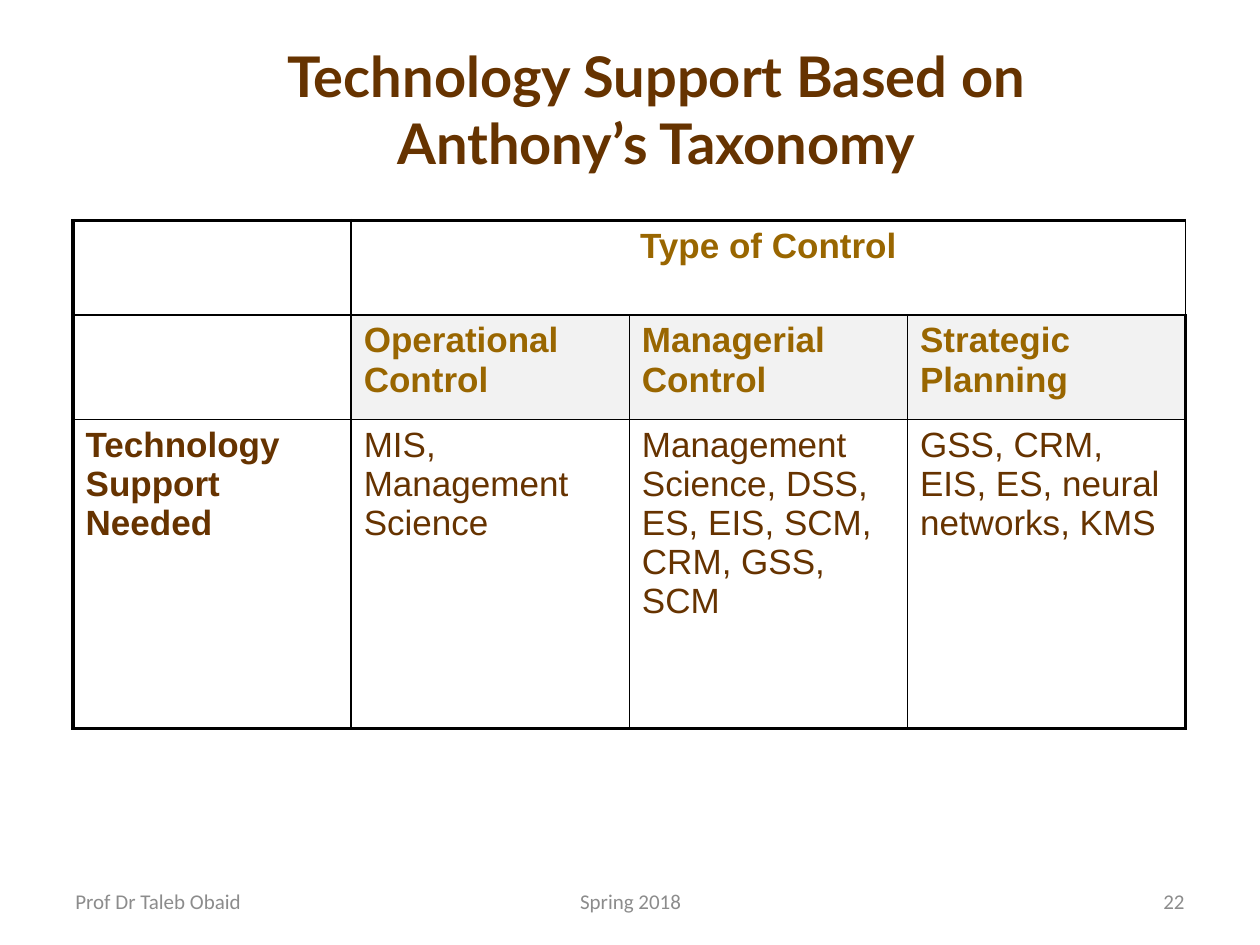
"""Build a slide with a table of technology support by type of control."""
from lxml import etree
from pptx import Presentation
from pptx.dml.color import RGBColor
from pptx.enum.text import MSO_ANCHOR, PP_ALIGN
from pptx.oxml.ns import qn
from pptx.util import Inches, Pt

LEFT, CENTER, RIGHT = PP_ALIGN.LEFT, PP_ALIGN.CENTER, PP_ALIGN.RIGHT
MIDDLE = MSO_ANCHOR.MIDDLE
TITLE_ONLY = 5
BROWN, GOLD, GRAY = "663300", "996600", "8C8C8C"
BLACK, PALE = "000000", "F2F2F2"
THICK, THIN = Pt(2.25), Pt(1)

ROWS = [
    ["", "Type of Control", "", ""],
    ["", "Operational Control", "Managerial Control", "Strategic Planning"],
    ["Technology Support Needed", "MIS, Management Science",
     "Management Science, DSS, ES, EIS, SCM, CRM, GSS, SCM",
     "GSS, CRM, EIS, ES, neural networks, KMS"],
]
ROW_HEIGHTS = [0.75, 0.83, 2.45]
COLUMN_WIDTH = 8.83 / 4
FOOTERS = [
    ("Prof Dr Taleb Obaid", 0.5, 2.33, LEFT),
    ("Spring 2018", 3.42, 3.17, CENTER),
    ("22", 7.17, 2.33, RIGHT),
]


def color(value):
    return RGBColor.from_string(value)


def write(frame, text, font, size, text_color, bold=False, align=LEFT):
    paragraph = frame.paragraphs[0]
    paragraph.text = text
    paragraph.alignment = align
    paragraph.font.name = font
    paragraph.font.size = Pt(size)
    paragraph.font.bold = bold
    paragraph.font.color.rgb = color(text_color)


def add_title(slide, text):
    title = slide.shapes.title
    title.left, title.top = Inches(1.17), Inches(0.3)
    title.width, title.height = Inches(8.08), Inches(1.12)
    title.text_frame.vertical_anchor = MIDDLE
    write(title.text_frame, text, "Lato", 32, BROWN, True, CENTER)


def add_footer(slide, text, left, width, align):
    box = slide.shapes.add_textbox(Inches(left), Inches(6.95), Inches(width), Inches(0.4))
    box.text_frame.word_wrap = True
    box.text_frame.vertical_anchor = MIDDLE
    write(box.text_frame, text, "Calibri", 12, GRAY, align=align)


def set_borders(cell, outer_sides):
    properties = cell._tc.get_or_add_tcPr()
    for side, is_outer in zip("LRTB", outer_sides):
        width = THICK if is_outer else THIN
        line = etree.SubElement(properties, qn(f"a:ln{side}"), w=str(width))
        fill = etree.SubElement(line, qn("a:solidFill"))
        etree.SubElement(fill, qn("a:srgbClr"), val=BLACK)


def format_cell(cell, text, row, column):
    last_row, last_column = len(ROWS) - 1, len(ROWS[0]) - 1
    set_borders(cell, (column == 0, column == last_column, row == 0, row == last_row))
    if row == 1 and column > 0:
        cell.fill.solid()
        cell.fill.fore_color.rgb = color(PALE)
    else:
        cell.fill.background()
    write(cell.text_frame, text, "Arial", 20,
          BROWN if row == last_row else GOLD,
          bold=row < last_row or column == 0,
          align=CENTER if row == 0 else LEFT)


def add_control_table(slide):
    frame = slide.shapes.add_table(
        len(ROWS), len(ROWS[0]), Inches(0.58), Inches(1.75),
        Inches(COLUMN_WIDTH * len(ROWS[0])), Inches(sum(ROW_HEIGHTS)))
    table = frame.table
    table.first_row = table.horz_banding = False
    for column in table.columns:
        column.width = Inches(COLUMN_WIDTH)
    for row, height in zip(table.rows, ROW_HEIGHTS):
        row.height = Inches(height)
    for row, texts in enumerate(ROWS):
        for column, text in enumerate(texts):
            format_cell(table.cell(row, column), text, row, column)
    table.cell(0, 1).merge(table.cell(0, 3))


def main():
    presentation = Presentation()
    presentation.slide_width, presentation.slide_height = Inches(10), Inches(7.5)
    slide = presentation.slides.add_slide(presentation.slide_layouts[TITLE_ONLY])
    for footer in FOOTERS:
        add_footer(slide, *footer)
    add_control_table(slide)
    add_title(slide, "Technology Support Based on Anthony’s Taxonomy")
    presentation.save("out.pptx")


if __name__ == "__main__":
    main()
